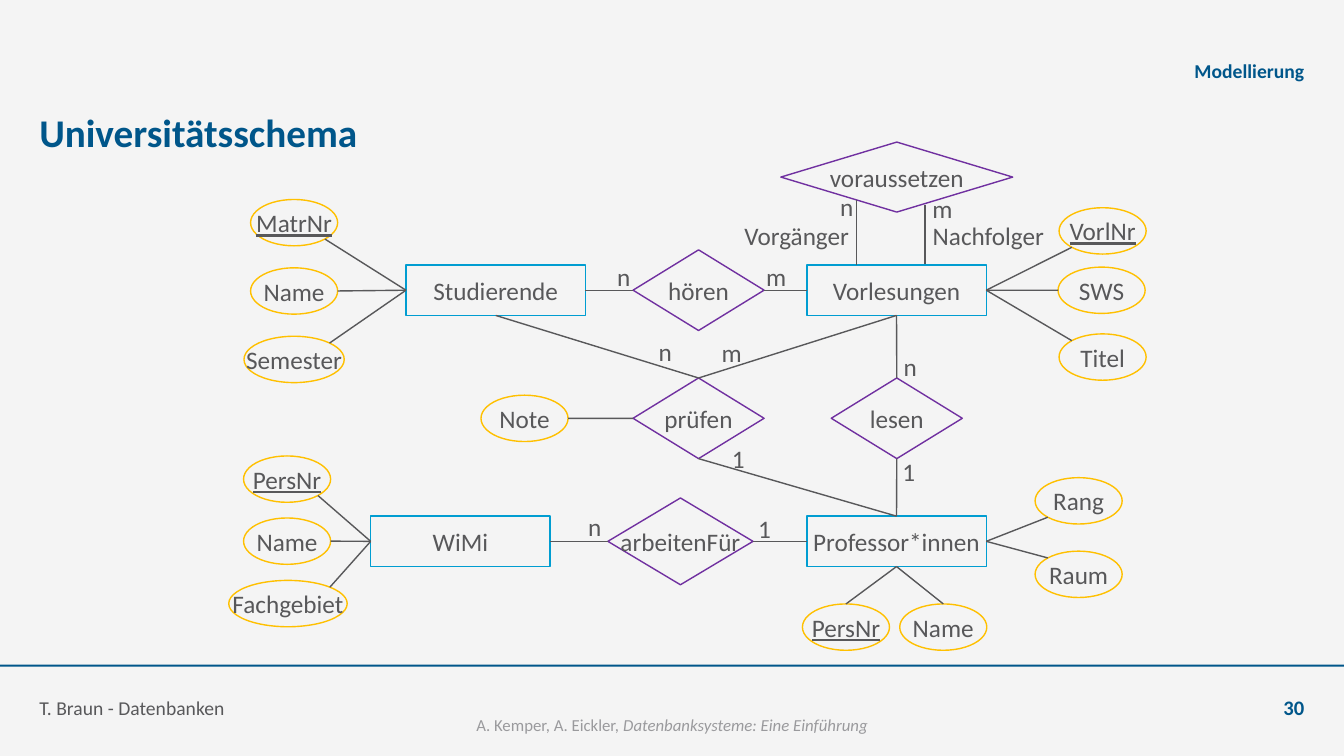
"""Build the entity-relationship slide of the university schema."""
from typing import NamedTuple

from lxml import etree
from pptx import Presentation
from pptx.dml.color import RGBColor
from pptx.enum.shapes import MSO_CONNECTOR, MSO_SHAPE
from pptx.enum.text import MSO_ANCHOR, MSO_AUTO_SIZE, PP_ALIGN
from pptx.oxml.ns import qn
from pptx.util import Pt

RECT, OVAL, RHOMB = MSO_SHAPE.RECTANGLE, MSO_SHAPE.OVAL, MSO_SHAPE.DIAMOND
STRAIGHT = MSO_CONNECTOR.STRAIGHT
TOP, MID, LOW = MSO_ANCHOR.TOP, MSO_ANCHOR.MIDDLE, MSO_ANCHOR.BOTTOM
LEFT, MID_X, RIGHT = PP_ALIGN.LEFT, PP_ALIGN.CENTER, PP_ALIGN.RIGHT
NO_FIT = MSO_AUTO_SIZE.NONE
BLUE, GREY, PALE = "00568A", "58585A", "9A9A9D"
CYAN, GOLD, PLUM = "009DD1", "FFC000", "7030A0"
NEAR, FAR = 0.146, 0.854
SITES = {"n": (0.5, 0), "s": (0.5, 1), "w": (0, 0.5), "e": (1, 0.5),
         "nw": (NEAR, NEAR), "ne": (FAR, NEAR), "sw": (NEAR, FAR), "se": (FAR, FAR)}
WIDTHS = {"1": 23.8, "n": 24.5, "m": 30.2}
BODY = {"size": Pt(18), "name": "Calibri"}


class Box(NamedTuple):
    x: float
    y: float
    w: float
    h: float

    def site(self, side: str) -> tuple[float, float]:
        fx, fy = SITES[side]
        return self.x + fx * self.w, self.y + fy * self.h


class Node(NamedTuple):
    text: str
    x: float
    y: float
    w: float
    h: float
    form: int
    tint: str


class Trait(NamedTuple):
    host: str
    out: str
    text: str
    x: float
    y: float
    side: str
    w: float = 62.2
    key: bool = False


class Link(NamedTuple):
    start: str
    out: str
    end: str
    side: str


class Note(NamedTuple):
    text: str
    x: float
    y: float


class Frame(NamedTuple):
    text: str
    box: Box
    size: float
    tint: str
    align: int
    bold: bool


NODES = [
    *(Node(text, x, y, 128.2, 36, RECT, CYAN) for text, x, y in (
        ("Studierende", 290, 189.3), ("WiMi", 264.8, 368.7),
        ("Professor*innen", 576.3, 368.7), ("Vorlesungen", 576.3, 189.3))),
    *(Node(text, x, y, 93.6, 57.6, RHOMB, PLUM) for text, x, y in (
        ("hören", 452.2, 178.5), ("prüfen", 452.2, 270), ("lesen", 593.8, 270))),
    Node("arbeitenFür", 434.2, 355.7, 103.7, 62, RHOMB, PLUM),
    Node("voraussetzen", 557.8, 101.5, 165.6, 50, RHOMB, PLUM),
]
TRAITS = [
    Trait("Studierende", "w", "MatrNr", 179, 142.5, "se", key=True),
    Trait("Studierende", "w", "Name", 179, 191.3, "e"),
    Trait("Studierende", "w", "Semester", 174.3, 240.2, "ne", 71.6),
    Trait("WiMi", "w", "PersNr", 174, 325.7, "se", key=True),
    Trait("WiMi", "w", "Name", 174, 370, "e"),
    Trait("WiMi", "w", "Fachgebiet", 163.4, 414.6, "ne", 84.6),
    Trait("prüfen", "w", "Note", 343.6, 282.3, "e"),
    Trait("Vorlesungen", "e", "VorlNr", 756.5, 148.4, "sw", key=True),
    Trait("Vorlesungen", "e", "SWS", 755.8, 190.8, "w"),
    Trait("Vorlesungen", "e", "Titel", 756.5, 238.5, "nw"),
    Trait("Professor*innen", "e", "Rang", 739.4, 341.2, "sw"),
    Trait("Professor*innen", "e", "Raum", 739.4, 393.7, "nw"),
    Trait("Professor*innen", "s", "PersNr", 573.2, 431.4, "n", key=True),
    Trait("Professor*innen", "s", "Name", 642.7, 431.4, "n"),
]
LINKS = [
    Link("Studierende", "e", "hören", "w"),
    Link("hören", "e", "Vorlesungen", "w"),
    Link("Studierende", "s", "prüfen", "n"),
    Link("Vorlesungen", "s", "prüfen", "n"),
    Link("prüfen", "s", "Professor*innen", "n"),
    Link("Vorlesungen", "s", "lesen", "n"),
    Link("lesen", "s", "Professor*innen", "n"),
    Link("WiMi", "e", "arbeitenFür", "w"),
    Link("arbeitenFür", "e", "Professor*innen", "w"),
]
ROLES = [((612, 142.6), (612, 189.3)), ((660.8, 146.2), (660.8, 188.6))]
NOTES = [
    Note("n", 433.4, 182.9), Note("m", 539.3, 182.9),
    Note("n", 463, 236.9), Note("m", 507.6, 237.6),
    Note("n", 637.9, 247.7), Note("1", 637.2, 322.6), Note("1", 515.5, 313.2),
    Note("n", 412.6, 361.4), Note("1", 534.2, 362.9),
    Note("n", 592.6, 133.2), Note("m", 658.1, 134.6),
]
WORDS = [("Vorgänger", Box(523.4, 153.6, 91.4, 28.8)),
         ("Nachfolger", Box(651.6, 154.1, 108.7, 28.8))]
TITLE = Frame("Universitätsschema", Box(28.1, 71.3, 903.6, 45.4), 28, BLUE, LEFT, True)
FRAMES = [
    Frame("Modellierung", Box(283, 31, 648.7, 28.1), 14, BLUE, RIGHT, True),
    Frame("T. Braun - Datenbanken", Box(28.1, 486, 662.4, 28.1), 14, GREY, LEFT, False),
    Frame("30", Box(874.8, 486, 56.9, 28.1), 14.7, BLUE, RIGHT, True),
]


def tone(code: str) -> RGBColor:
    return RGBColor.from_string(code)


def write(item, text: str, tint: str = GREY, align=MID_X, wrap: bool = False,
          anchor=MID, inset: bool = True, **extra) -> None:
    frame = item.text_frame
    look = {"word_wrap": wrap, "vertical_anchor": anchor, "auto_size": NO_FIT}
    if not inset:
        look |= {f"margin_{side}": 0 for side in ("left", "top", "right", "bottom")}
    for name, value in look.items():
        setattr(frame, name, value)
    para = frame.paragraphs[0]
    para.alignment = align
    add_run(para, text, tint, **extra)


def add_run(para, text: str, tint: str, **extra) -> None:
    run = para.add_run()
    run.text = text
    for name, value in (BODY | extra).items():
        setattr(run.font, name, value)
    run.font.color.rgb = tone(tint)


def add_box(slide, box: Box):
    return slide.shapes.add_textbox(*map(Pt, box))


def add_node(slide, text: str, box: Box, form, tint: str, key: bool = False) -> None:
    shape = slide.shapes.add_shape(form, *map(Pt, box))
    shape.shadow.inherit = False
    shape.fill.background()
    shape.line.color.rgb = tone(tint)
    shape.line.width = Pt(1)
    write(shape, text, underline=key)


def add_line(slide, start: tuple[float, float], end: tuple[float, float]) -> None:
    line = slide.shapes.add_connector(STRAIGHT, *map(Pt, start + end))
    line.line.color.rgb = tone(GREY)
    line.line.width = Pt(1)
    etree.SubElement(line._element.spPr, qn("a:effectLst"))


def add_frame(item, spec_row: Frame) -> None:
    anchor = MID if spec_row is TITLE else LOW
    write(item, spec_row.text, spec_row.tint, spec_row.align, True, anchor, False,
          size=Pt(spec_row.size), bold=spec_row.bold)


def main() -> None:
    deck = Presentation()
    deck.slide_width, deck.slide_height = Pt(960), Pt(540)
    slide = deck.slides.add_slide(deck.slide_layouts[5])
    slide.background.fill.solid()
    slide.background.fill.fore_color.rgb = tone("F4F4F4")

    title = slide.shapes.title
    for name, value in zip(("left", "top", "width", "height"), TITLE.box):
        setattr(title, name, Pt(value))
    add_frame(title, TITLE)
    rule = slide.shapes.add_shape(RECT, Pt(0), Pt(474.8), Pt(960), Pt(1.4))
    rule.shadow.inherit = False
    rule.fill.solid()
    rule.fill.fore_color.rgb = tone(BLUE)
    rule.line.fill.background()

    boxes = {node.text: Box(node.x, node.y, node.w, node.h) for node in NODES}
    for node in NODES:
        add_node(slide, node.text, boxes[node.text], node.form, node.tint)
    for trait in TRAITS:
        box = Box(trait.x, trait.y, trait.w, 33.1)
        add_node(slide, trait.text, box, OVAL, GOLD, trait.key)
        add_line(slide, boxes[trait.host].site(trait.out), box.site(trait.side))
    for link in LINKS:
        add_line(slide, boxes[link.start].site(link.out), boxes[link.end].site(link.side))
    for start, end in ROLES:
        add_line(slide, start, end)

    for note in NOTES:
        box = Box(note.x, note.y, WIDTHS[note.text], 28.8)
        write(add_box(slide, box), note.text, anchor=TOP)
    for text, box in WORDS:
        write(add_box(slide, box), text, wrap=True, anchor=TOP)
    for row in FRAMES:
        add_frame(add_box(slide, row.box), row)
    cite = add_box(slide, Box(307.4, 506.9, 345.6, 21.6))
    write(cite, "A. Kemper, A. Eickler, ", PALE, wrap=True, anchor=TOP, size=Pt(12))
    add_run(cite.text_frame.paragraphs[0], "Datenbanksysteme: Eine Einführung", PALE,
            size=Pt(12), italic=True)
    deck.save("out.pptx")


if __name__ == "__main__":
    main()
